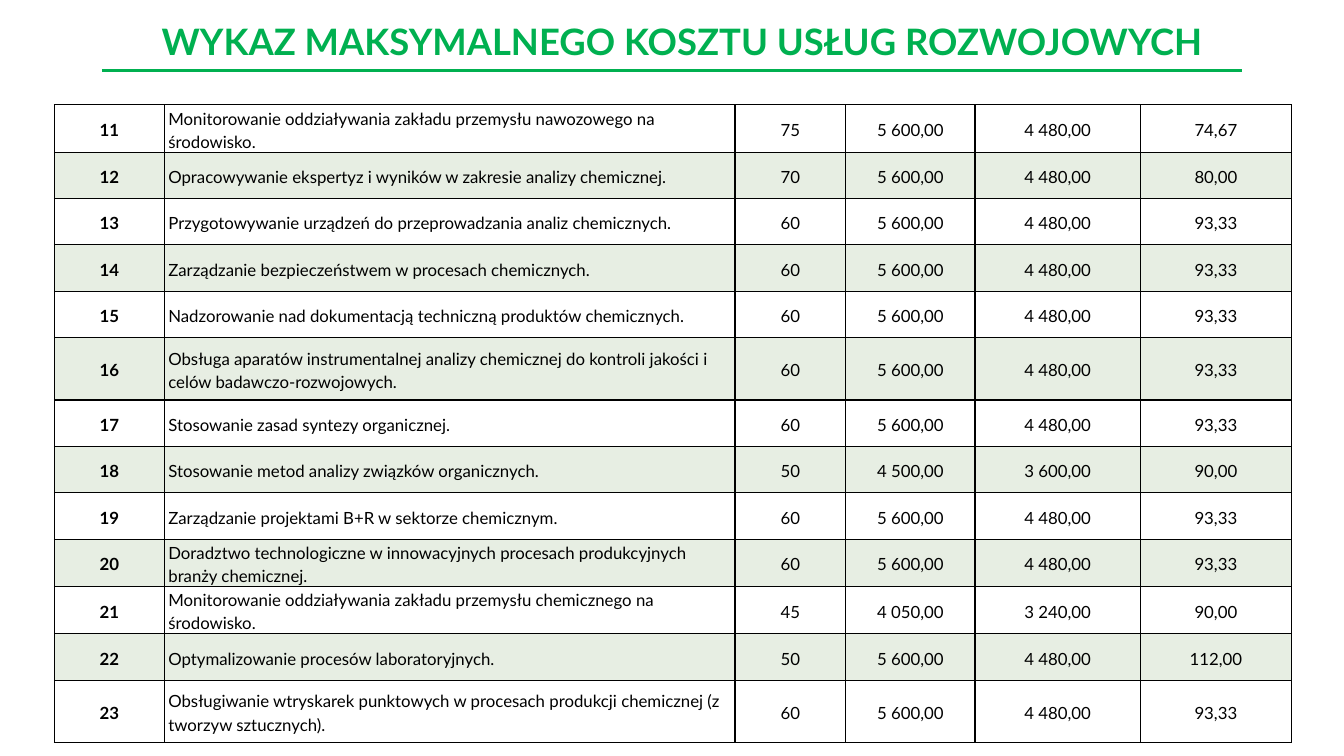
import pptx
import pptx.dml.color
import pptx.enum.shapes
import pptx.enum.text
import pptx.oxml
import pptx.oxml.ns
import pptx.util
from pptx.util import Inches

ALIGN = pptx.enum.text.PP_ALIGN
MIDDLE = pptx.enum.text.MSO_ANCHOR.MIDDLE
GREEN, BLACK, SAGE = "00B050", "000000", "8BAE77"
FIRST_NUMBER = 11
FUNDED_SHARE = 0.8
COLUMN_WIDTHS = [1.09, 5.66, 1.1, 1.28, 1.64, 1.5]

# Service name, hours, maximum cost, row height
SERVICES = [
    ("Monitorowanie oddziaływania zakładu przemysłu nawozowego na środowisko.", 75, 5600, 0.47),
    ("Opracowywanie ekspertyz i wyników w zakresie analizy chemicznej.", 70, 5600, 0.46),
    ("Przygotowywanie urządzeń do przeprowadzania analiz chemicznych.", 60, 5600, 0.46),
    ("Zarządzanie bezpieczeństwem w procesach chemicznych.", 60, 5600, 0.46),
    ("Nadzorowanie nad dokumentacją techniczną produktów chemicznych.", 60, 5600, 0.46),
    ("Obsługa aparatów instrumentalnej analizy chemicznej do kontroli jakości i celów "
     "badawczo-rozwojowych.", 60, 5600, 0.62),
    ("Stosowanie zasad syntezy organicznej.", 60, 5600, 0.46),
    ("Stosowanie metod analizy związków organicznych.", 50, 4500, 0.46),
    ("Zarządzanie projektami B+R w sektorze chemicznym.", 60, 5600, 0.46),
    ("Doradztwo technologiczne w innowacyjnych procesach produkcyjnych branży chemicznej.",
     60, 5600, 0.47),
    ("Monitorowanie oddziaływania zakładu przemysłu chemicznego na środowisko.", 45, 4050, 0.47),
    ("Optymalizowanie procesów laboratoryjnych.", 50, 5600, 0.46),
    ("Obsługiwanie wtryskarek punktowych w procesach produkcji chemicznej (z tworzyw "
     "sztucznych).", 60, 5600, 0.62),
]


def color(code):
    return pptx.dml.color.RGBColor.from_string(code)


def amount(value):
    """Format a number the Polish way: 5 600,00."""
    return f"{value:,.2f}".replace(",", " ").replace(".", ",")


class SlideBuilder:
    font = "Lato"

    def __init__(self, deck):
        self.page = deck.slides.add_slide(deck.slide_layouts[5])

    def style(self, para, size, code, bold, align, spacing):
        para.alignment = align
        para.line_spacing = spacing
        para.font.name = self.font
        para.font.size = pptx.util.Pt(size)
        para.font.bold = bold
        para.font.color.rgb = color(code)

    def title(self, text, left, top, width, height):
        box = self.page.shapes.title
        box.left, box.top = Inches(left), Inches(top)
        box.width, box.height = Inches(width), Inches(height)
        frame = box.text_frame
        frame.text = text
        frame.word_wrap = True
        frame.auto_size = pptx.enum.text.MSO_AUTO_SIZE.NONE
        frame.vertical_anchor = MIDDLE
        self.style(frame.paragraphs[0], 26, GREEN, True, ALIGN.CENTER, 0.9)

    def rule(self, left, right, y):
        line = self.page.shapes.add_connector(
            pptx.enum.shapes.MSO_CONNECTOR.STRAIGHT,
            Inches(left), Inches(y), Inches(right), Inches(y))
        line.line.color.rgb = color(GREEN)
        line.line.width = pptx.util.Pt(2.25)
        line._element.spPr.append(pptx.oxml.parse_xml(
            f'<a:effectLst {pptx.oxml.ns.nsdecls("a")}/>'))

    def borders(self, cell):
        properties = cell._tc.get_or_add_tcPr()
        for position, side in enumerate("LRTB"):
            properties.insert(position, pptx.oxml.parse_xml(
                f'<a:ln{side} {pptx.oxml.ns.nsdecls("a")} w="12700">'
                f'<a:solidFill><a:srgbClr val="{BLACK}"/></a:solidFill></a:ln{side}>'))

    def shade(self, cell, shaded):
        if not shaded:
            cell.fill.background()
            return
        cell.fill.solid()
        cell.fill.fore_color.rgb = color(SAGE)
        tint = cell._tc.tcPr.find(".//" + pptx.oxml.ns.qn("a:srgbClr"))
        tint.append(pptx.oxml.parse_xml(
            f'<a:alpha {pptx.oxml.ns.nsdecls("a")} val="20000"/>'))

    def cell(self, cell, text, column, shaded):
        cell.text = text
        cell.vertical_anchor = MIDDLE
        cell.margin_left = cell.margin_right = Inches(0.04)
        cell.margin_top = cell.margin_bottom = 0
        self.shade(cell, shaded)
        self.borders(cell)
        align = ALIGN.LEFT if column == 1 else ALIGN.CENTER
        self.style(cell.text_frame.paragraphs[0], 12, BLACK, column == 0, align, 1.15)

    def table(self, rows, heights, widths, left, top):
        grid = self.page.shapes.add_table(
            len(rows), len(widths), Inches(left), Inches(top),
            Inches(sum(widths)), Inches(sum(heights))).table
        grid.first_row = grid.horz_banding = False
        for column, width in zip(grid.columns, widths):
            column.width = Inches(width)
        for index, (texts, height) in enumerate(zip(rows, heights)):
            grid.rows[index].height = Inches(height)
            for column, text in enumerate(texts):
                self.cell(grid.cell(index, column), text, column, index % 2 == 1)


def main():
    deck = pptx.Presentation()
    deck.slide_width, deck.slide_height = Inches(13.33), Inches(7.5)
    slide = SlideBuilder(deck)

    # Heading
    slide.title("WYKAZ MAKSYMALNEGO KOSZTU USŁUG ROZWOJOWYCH", 1.12, 0.16, 11.3, 0.54)
    slide.rule(1.01, 12.32, 0.7)

    # Cost table: funded part and hourly rate follow from cost and hours
    rows = [
        (str(number), name, str(hours), amount(cost),
         amount(cost * FUNDED_SHARE), amount(cost / hours))
        for number, (name, hours, cost, _) in enumerate(SERVICES, FIRST_NUMBER)
    ]
    heights = [service[-1] for service in SERVICES]
    slide.table(rows, heights, COLUMN_WIDTHS, 0.54, 1.04)

    deck.save("out.pptx")


if __name__ == "__main__":
    main()
